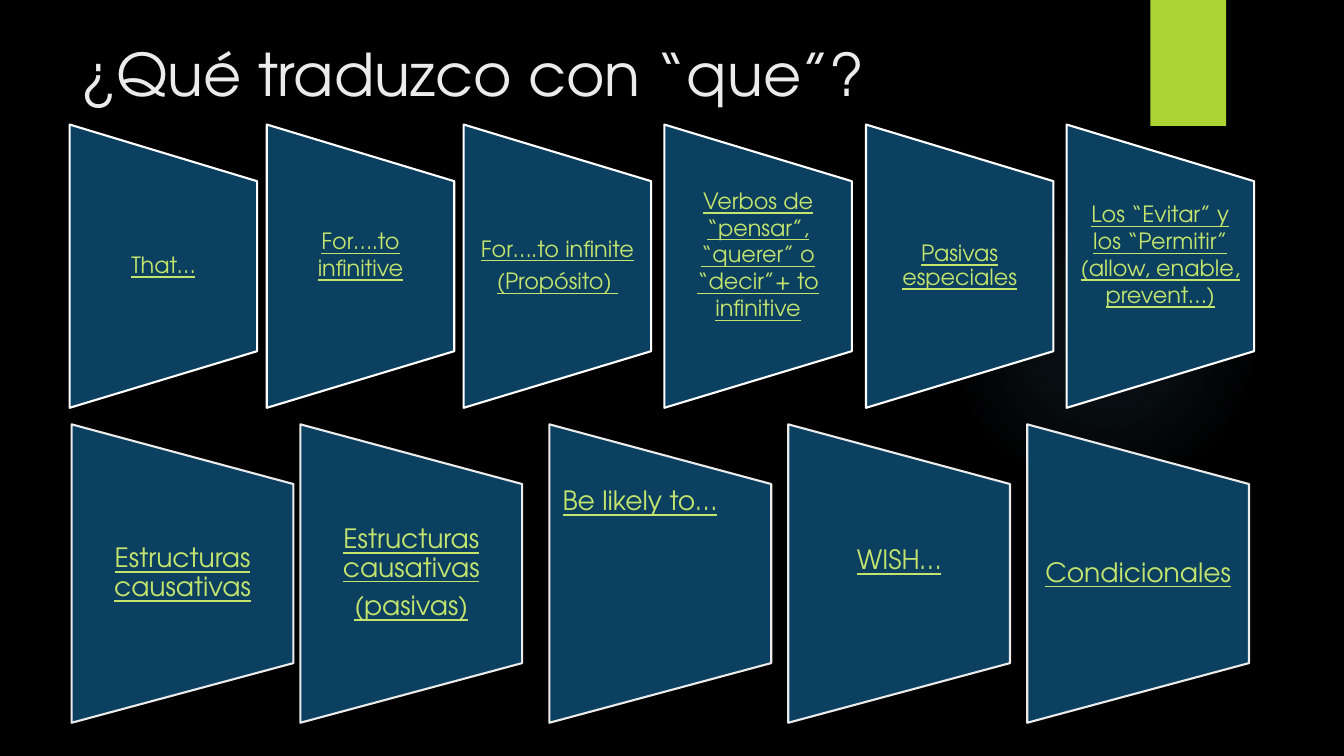
from dataclasses import dataclass

from lxml import etree
from pptx import Presentation
from pptx import util as u
from pptx.dml.color import RGBColor
from pptx.enum import shapes, text
from pptx.oxml import ns


@dataclass(frozen=True)
class Theme:
    font: str = "TeX Gyre Adventor"
    background: str = "000000"
    title: str = "EBEBEB"
    link: str = "C4E46E"
    panel: str = "0B4060"
    accent: str = "ACD433"
    glow: str = "7AC4F0"
    title_size: float = 42
    line_width: float = 1.5


@dataclass(frozen=True)
class Card:
    left: float
    lines: tuple[str, ...]
    spacing: float = 0.9
    raised: bool = False
    centred: bool = True


@dataclass(frozen=True)
class Row:
    """A row of cards; lengths are percentages of the slide's size."""
    top: float
    width: float
    height: float
    size: float
    inset: float
    outline: str
    cards: tuple[Card, ...]


THEME = Theme()
SLIDE_W, SLIDE_H = u.Inches(13.33), u.Inches(7.5)

ROWS = (
    Row(16.47, 13.95, 37.47, 16, 0.11, "FFFFFF", (
        Card(5.18, ("That…",)),
        Card(19.85, ("For….to infinitive",), spacing=1, raised=True),
        Card(34.5, ("For….to infinite", "(Propósito) ")),
        Card(49.43, ("Verbos de “pensar”, “querer” o “decir”+ to infinitive",),
             spacing=1, raised=True),
        Card(64.43, ("Pasivas especiales",)),
        Card(79.36, ("Los “Evitar” y los “Permitir” (allow, enable, prevent…)",),
             spacing=1, raised=True),
    )),
    Row(56.13, 16.5, 39.47, 19, 0.13, "EBEBEB", (
        Card(5.33, ("Estructuras causativas",)),
        Card(22.35, ("Estructuras causativas", "(pasivas)")),
        Card(40.88, ("Be likely to…",), spacing=1, centred=False),
        Card(58.65, ("WISH…",), spacing=1, raised=True),
        Card(76.43, ("Condicionales",)),
    )),
)


def x(percent: float) -> int:
    return round(SLIDE_W * percent / 100)


def y(percent: float) -> int:
    return round(SLIDE_H * percent / 100)


def rgb(value: str) -> RGBColor:
    return RGBColor.from_string(value)


def add_run(p, words: str, size: float, colour: str, underline: bool = False) -> None:
    r = p.add_run()
    r.text = words
    r.font.name = THEME.font
    r.font.size = u.Pt(size)
    r.font.color.rgb = rgb(colour)
    r.font.underline = underline


def add_glow(s) -> None:
    """Draw a soft circle that fades out from its centre."""
    side = x(23.1)
    glow = s.shapes.add_shape(shapes.MSO_SHAPE.OVAL, x(70.6), y(24.4), side, side)
    glow.shadow.inherit = False
    glow.line.fill.background()
    stops = "".join(
        f'<a:gs pos="{pos}000"><a:srgbClr val="{THEME.glow}">'
        f'<a:alpha val="{alpha}000"/></a:srgbClr></a:gs>'
        for pos, alpha in ((0, 7), (36, 6), (69, 0)))
    gradient = etree.fromstring(
        f'<a:gradFill {ns.nsdecls("a")} rotWithShape="1"><a:gsLst>{stops}</a:gsLst>'
        '<a:path path="circle"><a:fillToRect l="50000" t="50000" r="50000" b="50000"/>'
        '</a:path></a:gradFill>')
    glow.element.spPr.find(ns.qn("a:prstGeom")).addnext(gradient)


def add_accent(s) -> None:
    tab = s.shapes.add_shape(shapes.MSO_SHAPE.RECTANGLE, x(85.6), 0, x(5.63), y(16.67))
    tab.shadow.inherit = False
    tab.fill.solid()
    tab.fill.fore_color.rgb = rgb(THEME.accent)
    tab.line.fill.background()


def add_title(s, words: str) -> None:
    title = s.shapes.title
    title.left, title.top, title.width, title.height = x(5.33), y(4.13), x(82.2), y(10.93)
    tf = title.text_frame
    tf.auto_size = text.MSO_AUTO_SIZE.NONE
    tf.vertical_anchor = text.MSO_ANCHOR.MIDDLE
    p = tf.paragraphs[0]
    p.alignment = text.PP_ALIGN.LEFT
    add_run(p, words, THEME.title_size, THEME.title)


def add_panel(group, row: Row, card: Card) -> None:
    """Draw a trapezoid, turned so that its wide side faces left."""
    width, height = x(row.width), y(row.height)
    shift = (height - width) // 2
    sp = group.shapes.add_shape(
        shapes.MSO_SHAPE.FLOWCHART_MANUAL_OPERATION,
        x(card.left) - shift, y(row.top) + shift, height, width)
    sp.rotation = 270
    sp.shadow.inherit = False
    sp.fill.solid()
    sp.fill.fore_color.rgb = rgb(THEME.panel)
    sp.line.color.rgb = rgb(row.outline)
    sp.line.width = u.Pt(THEME.line_width)


def add_label(group, row: Row, card: Card) -> None:
    """Write the card's text in the middle three fifths of its panel."""
    sp = group.shapes.add_textbox(
        x(card.left), y(row.top + row.height * 0.2), x(row.width), y(row.height * 0.6))
    tf = sp.text_frame
    tf.word_wrap = True
    tf.margin_left = tf.margin_right = u.Inches(row.inset)
    tf.margin_top = 0
    tf.margin_bottom = u.Pt(row.size * 1.08) if card.raised else 0
    tf.vertical_anchor = text.MSO_ANCHOR.MIDDLE if card.centred else text.MSO_ANCHOR.TOP
    for i, line in enumerate(card.lines):
        p = tf.add_paragraph() if i else tf.paragraphs[0]
        p.alignment = text.PP_ALIGN.CENTER if card.centred else text.PP_ALIGN.LEFT
        p.line_spacing = card.spacing
        p.space_after = u.Pt(round(row.size * 0.35))
        add_run(p, line, row.size, THEME.link, underline=True)


def main() -> None:
    prs = Presentation()
    prs.slide_width, prs.slide_height = SLIDE_W, SLIDE_H
    s = prs.slides.add_slide(prs.slide_layouts.get_by_name("Title Only"))
    s.background.fill.solid()
    s.background.fill.fore_color.rgb = rgb(THEME.background)
    add_glow(s)
    add_accent(s)
    add_title(s, "¿Qué traduzco con “que”?")
    for row in ROWS:
        group = s.shapes.add_group_shape()
        for card in row.cards:
            add_panel(group, row, card)
            add_label(group, row, card)
    prs.save("out.pptx")


if __name__ == "__main__":
    main()
